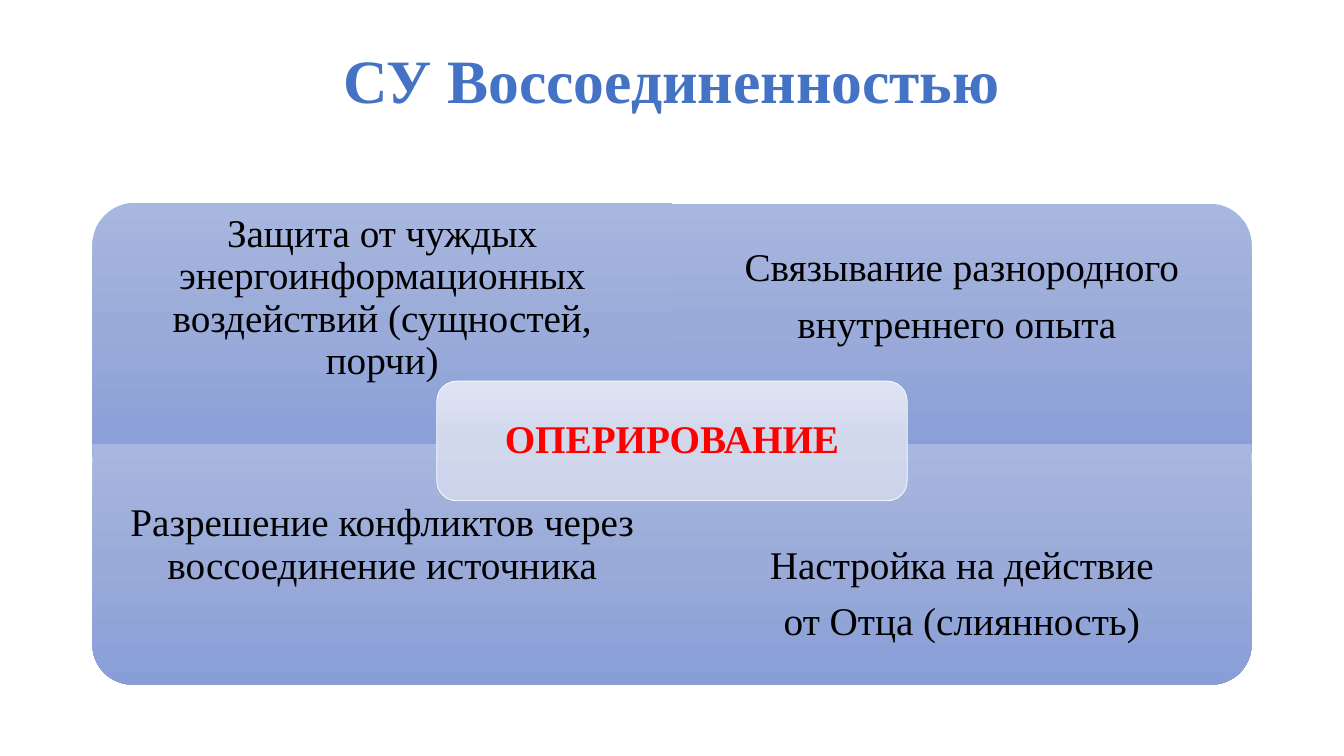
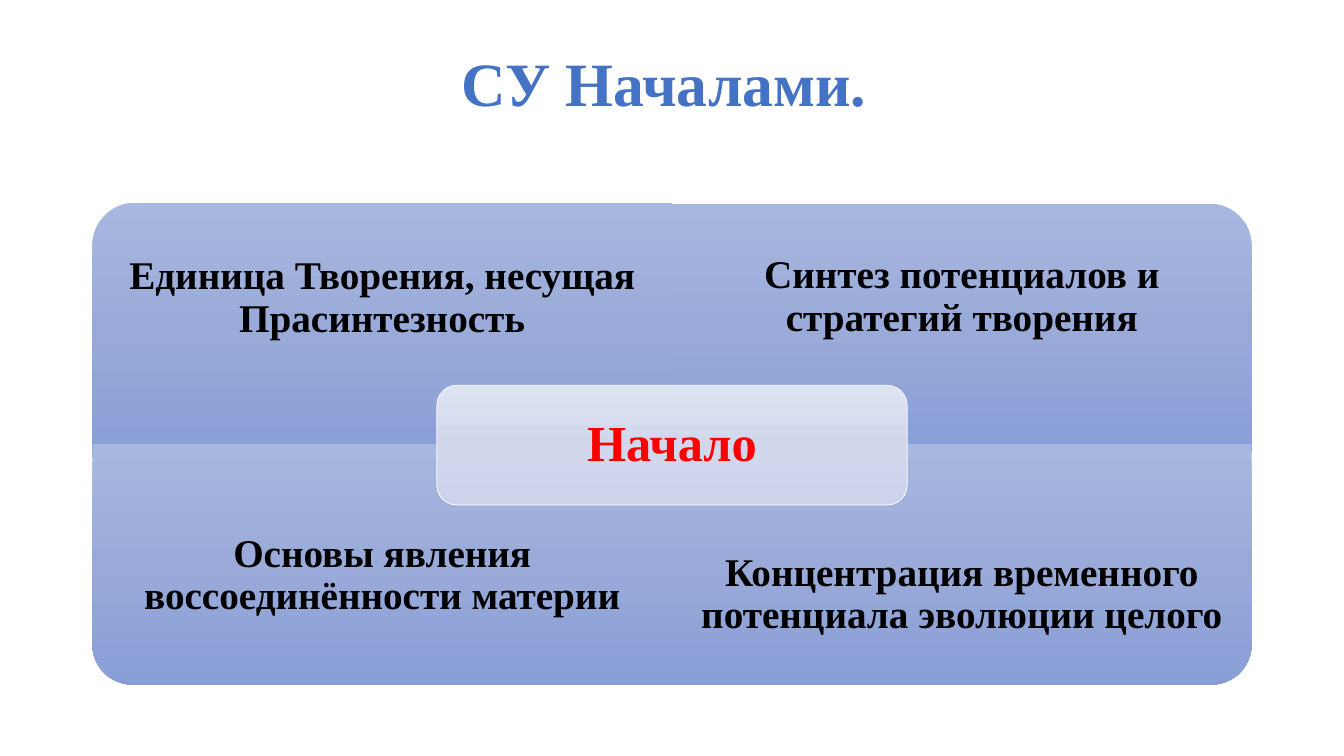
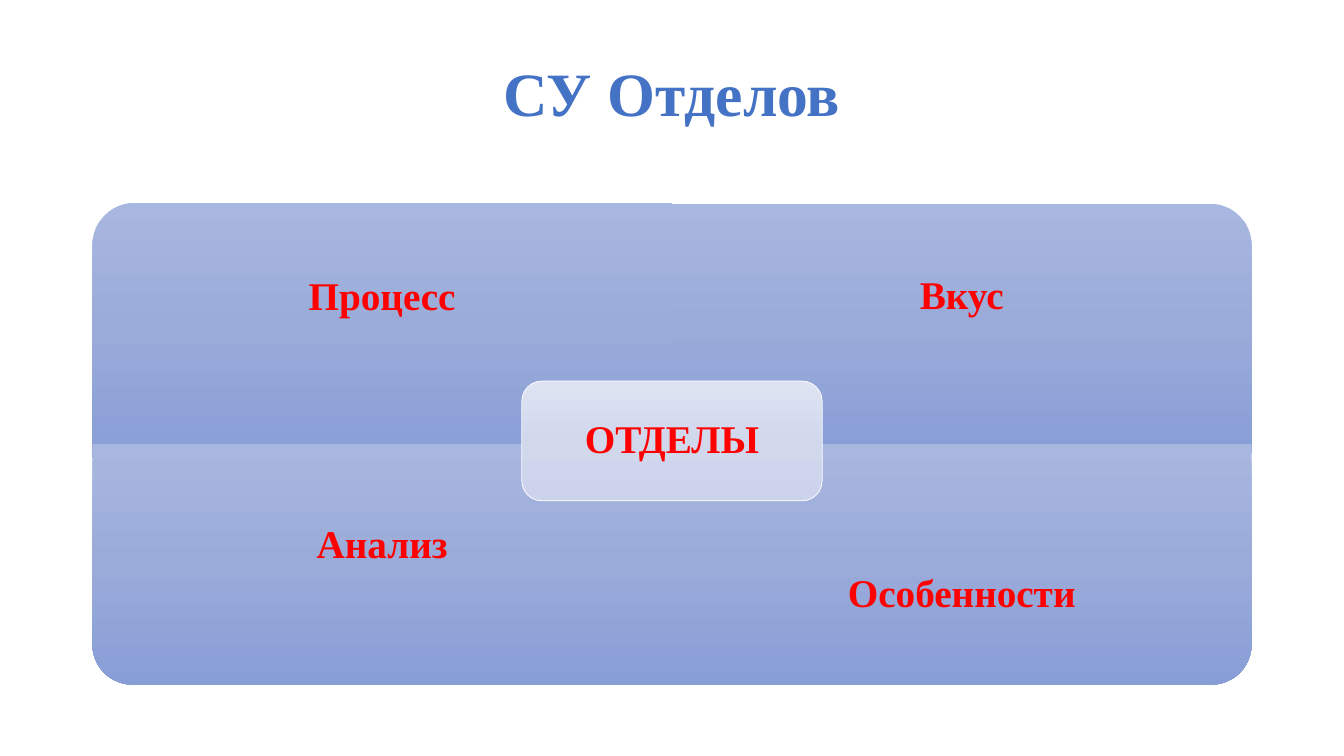
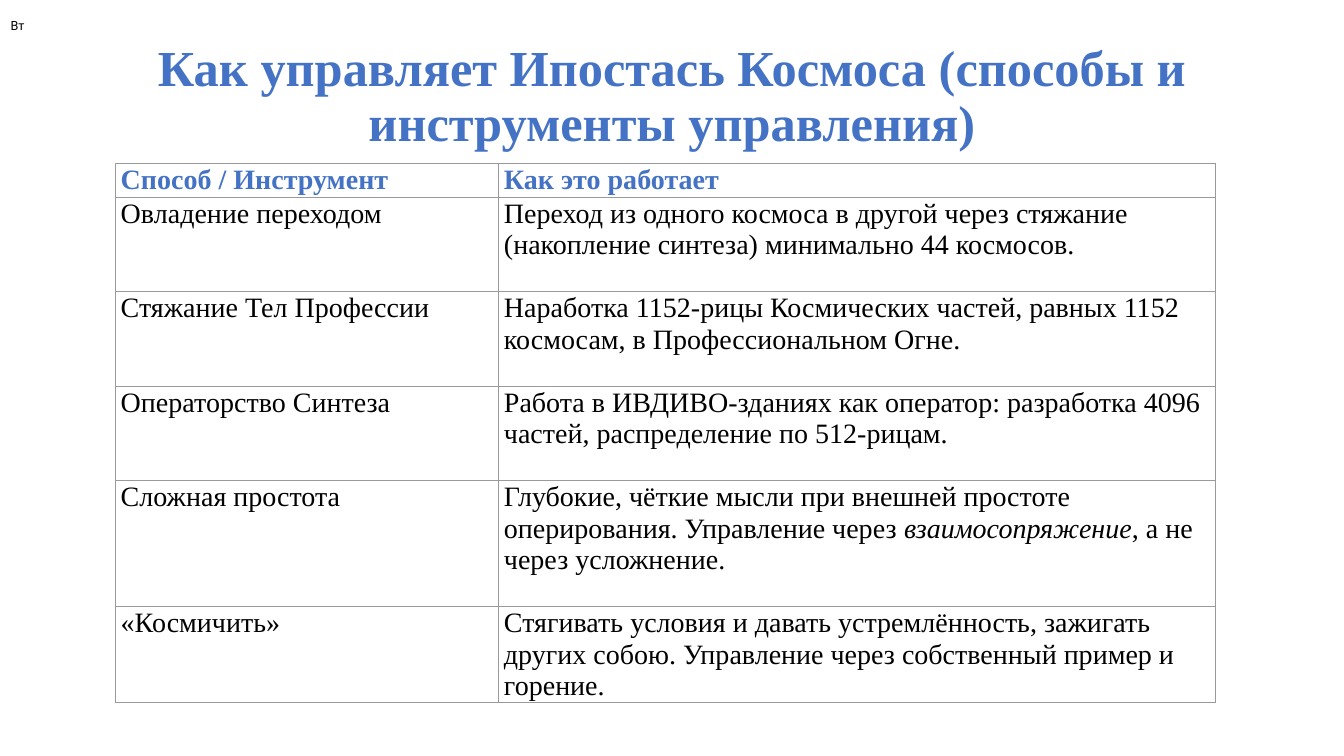
"""Build four slides: three quadrant matrices and a table of methods."""
from pptx import Presentation
from pptx.dml.color import RGBColor
from pptx.enum.shapes import MSO_SHAPE
from pptx.enum.text import MSO_ANCHOR, MSO_AUTO_SIZE, PP_ALIGN
from pptx.oxml import parse_xml
from pptx.oxml.ns import nsdecls
from pptx.util import Pt

PX = 9525
FONT = "Times New Roman"
BLUE = RGBColor(0x44, 0x72, 0xC4)
RED = RGBColor(0xFF, 0x00, 0x00)
BLACK = RGBColor(0x00, 0x00, 0x00)
WHITE = RGBColor(0xFF, 0xFF, 0xFF)
GRID = RGBColor(0x9A, 0x9A, 0x9A)
QUADRANT_FILL = [RGBColor(0xA8, 0xB7, 0xDF), RGBColor(0x9A, 0xAB, 0xD9), RGBColor(0x88, 0x9E, 0xD7)]
CENTER_FILL = [RGBColor(0xDE, 0xE3, 0xF2), RGBColor(0xD2, 0xD8, 0xEC), RGBColor(0xCC, 0xD3, 0xEB)]

LEFT, MIDDLE, HALF = 88, 640, 552
QUADRANTS = [
    dict(x=LEFT, y=193, h=243, rot=270, text_y=193, text_h=182),
    dict(x=MIDDLE, y=194, h=237, rot=0, text_y=194, text_h=178),
    dict(x=LEFT, y=423, h=229, rot=180, text_y=481, text_h=171),
    dict(x=MIDDLE, y=423, h=229, rot=90, text_y=481, text_h=171),
]

MATRICES = [
    dict(title="СУ Воссоединенностью", title_box=(88, 38, 1104, 139), title_pad=61,
         texts=[["Защита от чуждых энергоинформационных воздействий (сущностей, порчи)"],
                ["Связывание разнородного", "внутреннего опыта "],
                ["Разрешение конфликтов через воссоединение источника"],
                ["Настройка на действие", "от Отца (слиянность)"]],
         color=BLACK, bold=False, lift=94,
         center="ОПЕРИРОВАНИЕ", center_size=28, center_y=363, center_w=448),
    dict(title="СУ Началами. ", title_box=(88, 38, 1104, 139), title_pad=56,
         texts=[["Единица Творения, несущая Прасинтезность"],
                ["Синтез потенциалов и стратегий творения"],
                ["Основы явления воссоединённости материи"],
                ["Концентрация временного потенциала эволюции целого"]],
         color=BLACK, bold=True, lift=36,
         center="Начало", center_size=36, center_y=367, center_w=448),
    dict(title="СУ Отделов", title_box=(88, 13, 1104, 157), title_pad=5,
         texts=[["Процесс"], ["Вкус"], ["Анализ"], ["Особенности"]],
         color=RED, bold=True, lift=94,
         center="ОТДЕЛЫ", center_size=28, center_y=363, center_w=286),
]

METHODS_TITLE = "Как управляет Ипостась Космоса (способы и инструменты управления)"
METHODS = [
    ("Способ / Инструмент", "Как это работает"),
    ("Овладение переходом",
     "Переход из одного космоса в другой через стяжание (накопление синтеза) минимально 44 космосов."),
    ("Стяжание Тел Профессии",
     "Наработка 1152-рицы Космических частей, равных 1152 космосам, в Профессиональном Огне."),
    ("Операторство Синтеза",
     "Работа в ИВДИВО-зданиях как оператор: разработка 4096 частей, распределение по 512-рицам."),
    ("Сложная простота",
     "Глубокие, чёткие мысли при внешней простоте оперирования. "
     "Управление через *взаимосопряжение*, а не через усложнение."),
    ("«Космичить»",
     "Стягивать условия и давать устремлённость, зажигать других собою. "
     "Управление через собственный пример и горение."),
]
COL_WIDTHS = [365, 683]
ROW_HEIGHTS = [32, 90, 90, 90, 120, 91]


def px(*values):
    return [round(v * PX) for v in values]


def set_margins(tf, left, top, right, bottom):
    tf.margin_left, tf.margin_top, tf.margin_right, tf.margin_bottom = px(left, top, right, bottom)


def write(tf, paragraphs, size=28, color=BLACK, bold=False, font=FONT,
          align=PP_ALIGN.CENTER, spacing=0.9):
    for i, text in enumerate(paragraphs):
        p = tf.add_paragraph() if i else tf.paragraphs[0]
        p.alignment = align
        p.line_spacing = spacing
        p.space_before = Pt(10 if i else 0)
        p.space_after = Pt(0)
        for j, part in enumerate(text.split("*")):
            r = p.add_run()
            r.text = part
            r.font.name, r.font.size, r.font.bold = font, Pt(size), bold
            r.font.italic = j % 2 == 1
            r.font.color.rgb = color


def add_title(slide, text, box, pad, size=44):
    sp = slide.shapes.title
    sp.left, sp.top, sp.width, sp.height = px(*box)
    tf = sp.text_frame
    tf.word_wrap = True
    tf.auto_size = MSO_AUTO_SIZE.NONE
    tf.vertical_anchor = MSO_ANCHOR.MIDDLE
    set_margins(tf, 10, 5, 10, pad)
    write(tf, [text], size=size, color=BLUE, bold=True)


def add_text(slide, box, margins, paragraphs, **fmt):
    tf = slide.shapes.add_textbox(*px(*box)).text_frame
    tf.word_wrap = True
    tf.vertical_anchor = MSO_ANCHOR.MIDDLE
    set_margins(tf, *margins)
    write(tf, paragraphs, **fmt)


def add_gradient_shape(slide, kind, box, colors, rot=0):
    x, y, w, h = box
    if rot % 180:
        x, y, w, h = x + (w - h) / 2, y + (h - w) / 2, h, w
    sp = slide.shapes.add_shape(kind, *px(x, y, w, h))
    sp.rotation = rot
    sp.shadow.inherit = False
    sp.line.fill.background()
    sp.fill.background()
    stops = "".join(f'<a:gs pos="{i * 50000}"><a:srgbClr val="{c}"/></a:gs>'
                    for i, c in enumerate(colors))
    gradient = parse_xml(f'<a:gradFill {nsdecls("a")} rotWithShape="0"><a:gsLst>{stops}</a:gsLst>'
                         '<a:lin ang="5400000" scaled="0"/></a:gradFill>')
    spPr = sp._element.spPr
    spPr.replace(spPr.find("{*}noFill"), gradient)
    return sp


def add_matrix(slide, m):
    add_title(slide, m["title"], m["title_box"], m["title_pad"])
    for i, (q, text) in enumerate(zip(QUADRANTS, m["texts"])):
        add_gradient_shape(slide, MSO_SHAPE.ROUND_1_RECTANGLE,
                           (q["x"], q["y"], HALF, q["h"]), QUADRANT_FILL, q["rot"])
        add_text(slide, (q["x"], q["text_y"], HALF, q["text_h"]),
                 (21, 0, 21, m["lift"] if i == 2 else 0), text, color=m["color"], bold=m["bold"])
    w = m["center_w"]
    sp = add_gradient_shape(slide, MSO_SHAPE.ROUNDED_RECTANGLE,
                            (MIDDLE - w / 2, m["center_y"], w, 114), CENTER_FILL)
    sp.line.color.rgb = WHITE
    sp.line.width = Pt(0.5)
    sp.text_frame.word_wrap = True
    sp.text_frame.vertical_anchor = MSO_ANCHOR.MIDDLE
    write(sp.text_frame, [m["center"]], size=m["center_size"], color=RED, bold=True)


def format_cell(cell, text, header):
    cell.fill.background()
    set_margins(cell, 5, 1, 5, 1)
    write(cell.text_frame, [text], size=20, color=BLUE if header else BLACK, bold=header,
          align=PP_ALIGN.LEFT, spacing=1.0)
    tcPr = cell._tc.get_or_add_tcPr()
    for i, side in enumerate(("lnL", "lnR", "lnT", "lnB")):
        tcPr.insert(i, parse_xml(f'<a:{side} {nsdecls("a")} w="{Pt(0.75)}"><a:solidFill>'
                                 f'<a:srgbClr val="{GRID}"/></a:solidFill></a:{side}>'))


def add_methods(slide):
    add_title(slide, METHODS_TITLE, (88, 18, 1104, 219), 74, size=36)
    table = slide.shapes.add_table(len(METHODS), len(COL_WIDTHS), *px(
        110, 156, sum(COL_WIDTHS), sum(ROW_HEIGHTS))).table
    table.first_row = table.horz_banding = False
    for col, w in zip(table.columns, COL_WIDTHS):
        col.width = w * PX
    for i, (row, h) in enumerate(zip(table.rows, ROW_HEIGHTS)):
        row.height = h * PX
        for cell, text in zip(row.cells, METHODS[i]):
            format_cell(cell, text, i == 0)
    add_text(slide, (0, 0, 1280, 48), (10, 5, 10, 5), ["Вт"], size=9, font="Roboto",
             align=PP_ALIGN.LEFT, spacing=1.0)


def main():
    prs = Presentation()
    prs.slide_width, prs.slide_height = px(1280, 720)
    layout = prs.slide_layouts[5]
    for m in MATRICES:
        add_matrix(prs.slides.add_slide(layout), m)
    add_methods(prs.slides.add_slide(layout))
    prs.save("out.pptx")


if __name__ == "__main__":
    main()
